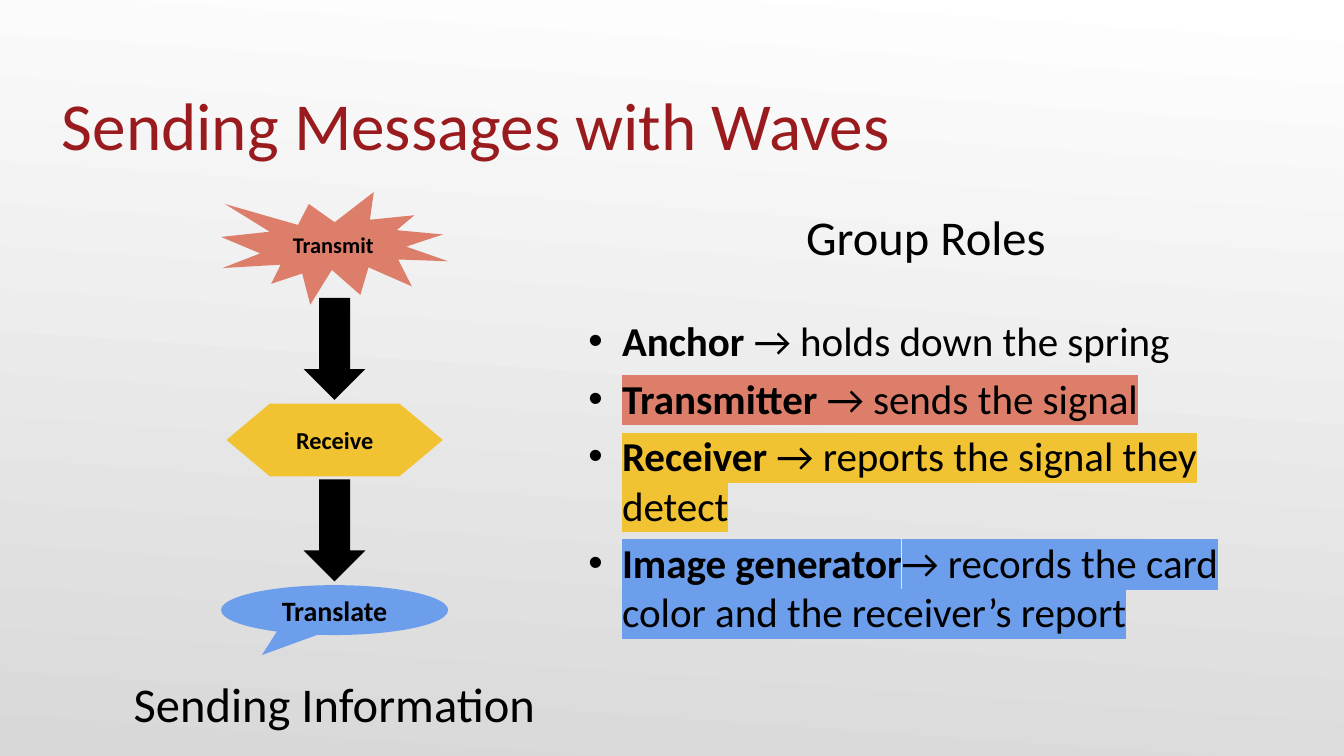
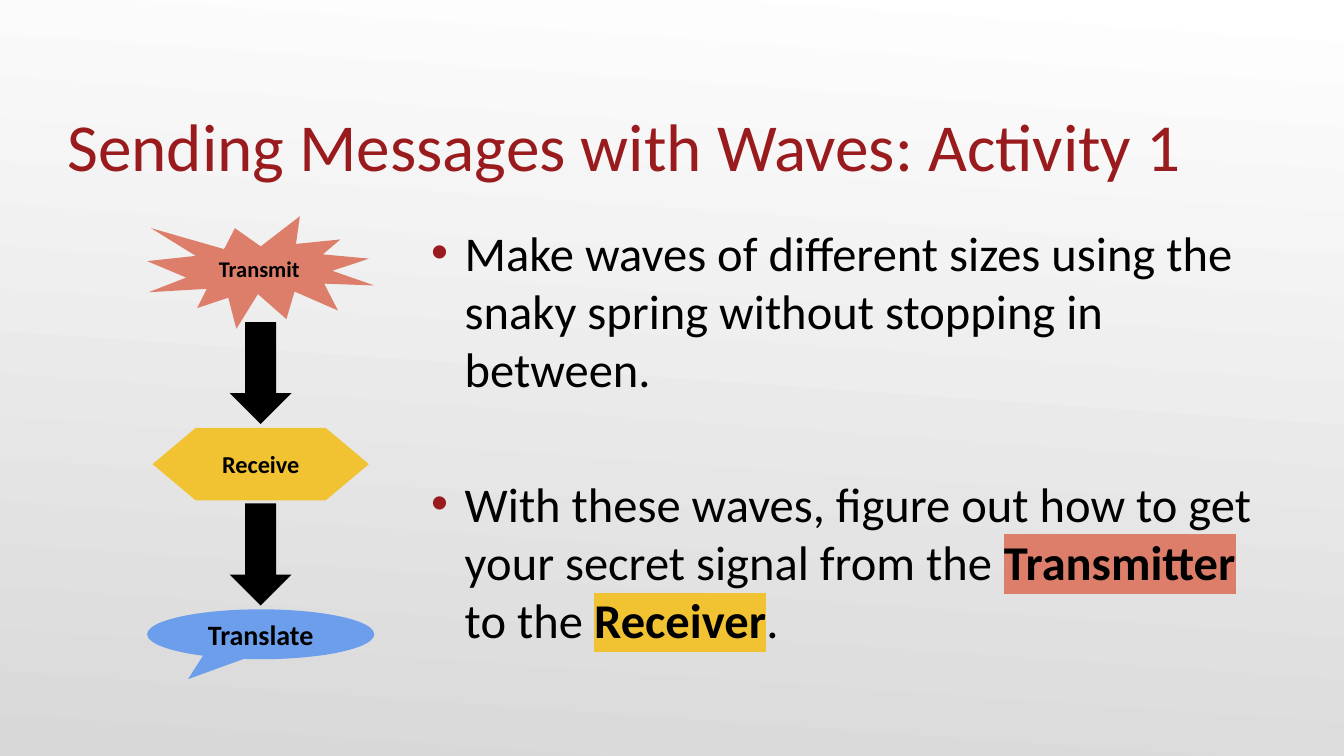
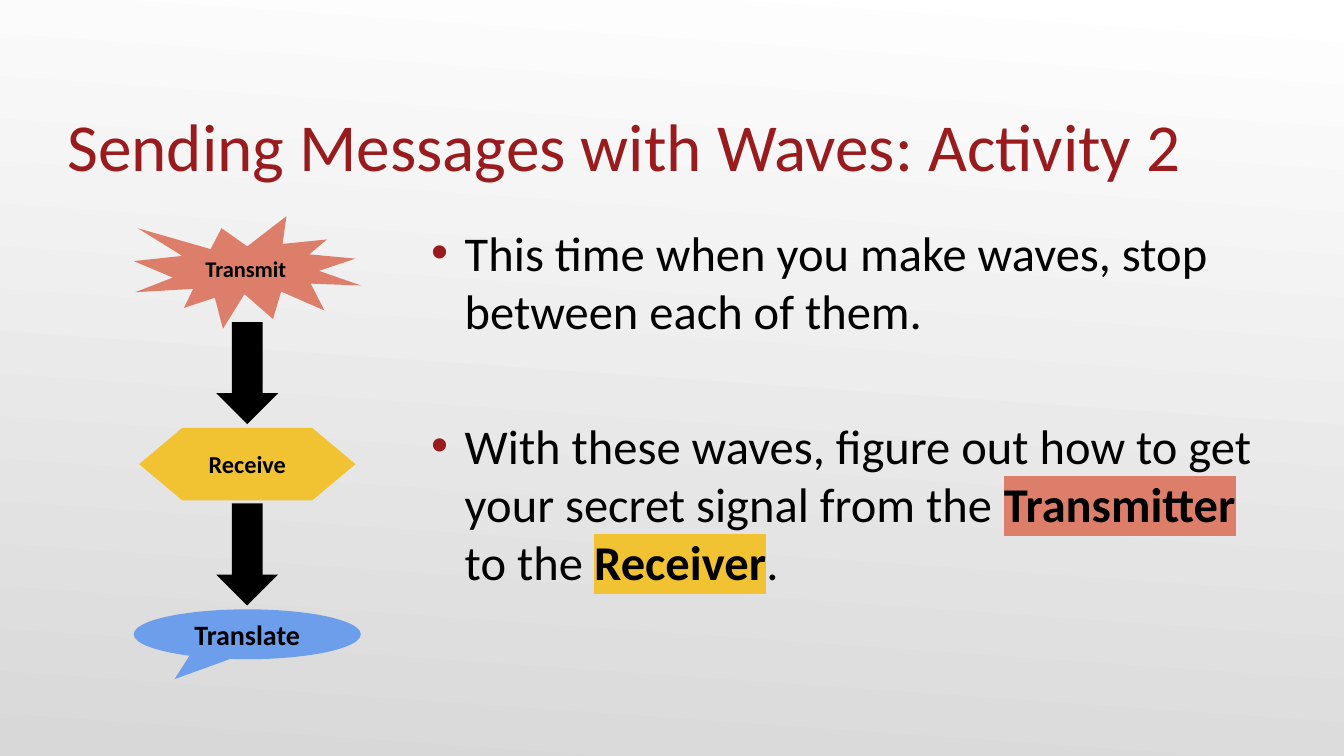
from lxml.etree import SubElement
from pptx import Presentation
from pptx.dml.color import RGBColor
from pptx.enum.shapes import MSO_SHAPE as SHAPE
from pptx.enum.text import MSO_ANCHOR as ANCHOR, PP_ALIGN as ALIGN
from pptx.oxml import parse_xml
from pptx.oxml.ns import nsdecls, qn
from pptx.util import Inches, Pt

FONT = "Calibri"
BLACK, RED = "000000", "991B1E"
CORAL, YELLOW, BLUE = "DD7E6B", "F1C232", "6D9EEB"
color = RGBColor.from_string

presentation = Presentation()
presentation.slide_width, presentation.slide_height = Inches(10), Inches(5.625)
# Grid of 100 columns and 100 rows
COLUMN = presentation.slide_width / 100
ROW = presentation.slide_height / 100

background = presentation.slide_master.background.fill
background.gradient()
background.gradient_angle = 360 - 94
for stop, shade in zip(background.gradient_stops, ("FFFFFF", "D8D8D8")):
    stop.color.rgb = color(shade)


def add_text_frame(slide, box, margins, anchor):
    """Add a text box at (left, top, width, height) in grid units."""
    left, top, width, height = box
    shape = slide.shapes.add_textbox(
        int(left * COLUMN), int(top * ROW), int(width * COLUMN), int(height * ROW))
    frame = shape.text_frame
    frame.word_wrap = True
    frame.vertical_anchor = anchor
    (frame.margin_left, frame.margin_top,
     frame.margin_right, frame.margin_bottom) = map(Inches, margins)
    return frame


def write(paragraph, runs, size, ink=BLACK):
    """Fill a paragraph with (text, bold, highlight) runs."""
    for text, bold, highlight in runs:
        run = paragraph.add_run()
        run.text = text
        run.font.size = Pt(size)
        run.font.bold = bold
        run.font.color.rgb = color(ink)
        run.font.name = FONT
        if highlight:
            run._r.rPr.find(qn("a:solidFill")).addnext(parse_xml(
                f'<a:highlight {nsdecls("a")}><a:srgbClr val="{highlight}"/></a:highlight>'))


# Shape, label, text size, fill, top in rows, width in columns, height in rows
FLOW = [
    (SHAPE.DOWN_ARROW, "", 0, BLACK, 14, 4.6, 13.5),
    (SHAPE.OVAL_CALLOUT, "Translate", 15, BLUE, 52, 16.9, 6.6),
    (SHAPE.EXPLOSION1, "Transmit", 12, CORAL, 0, 16.9, 14.9),
    (SHAPE.FLOWCHART_PREPARATION, "Receive", 13, YELLOW, 28, 16.1, 9.6),
    (SHAPE.DOWN_ARROW, "", 0, BLACK, 38, 4.6, 13.5),
]

ROLES = [
    [("Anchor ", True, None), ("→ holds down the spring", False, None)],
    [("Transmitter ", True, CORAL), ("→ sends the signal", False, CORAL)],
    [("Receiver", True, YELLOW),
     (" → reports the signal they detect", False, YELLOW)],
    [("Image generator", True, BLUE),
     ("→ records the card color and the receiver’s report", False, BLUE)],
]
SECRET_SIGNAL = [
    ("With these waves, figure out how to get your secret signal from the ", False, None),
    ("Transmitter", True, CORAL),
    (" to the ", False, None),
    ("Receiver", True, YELLOW),
    (".", False, None),
]
ACTIVITIES = [
    "Make waves of different sizes using the snaky spring without stopping in between.",
    "This time when you make waves, stop between each of them.",
]

# Title, title left and top, flow centre and top
SLIDES = [
    ("Sending Messages with Waves", 4.6, 7.6, 24.9, 25.4),
    ("Sending Messages with Waves: Activity 1", 5, 10.3, 19.4, 28.6),
    ("Sending Messages with Waves: Activity 2", 5, 10.3, 18.4, 28.6),
]

for index, (title, title_left, title_top, flow_center, flow_top) in enumerate(SLIDES):
    slide = presentation.slides.add_slide(presentation.slide_layouts[6])

    frame = add_text_frame(slide, (title_left, title_top, 90.8, 16.7),
                           (0, 0.05, 0, 0), ANCHOR.MIDDLE)
    write(frame.paragraphs[0], [(title, False, None)], 36, RED)

    if index == 0:
        frame = add_text_frame(slide, (8.4, 88.2, 33, 9.6),
                               (0.05, 0, 0.05, 0), ANCHOR.MIDDLE)
        caption = frame.paragraphs[0]
        caption.alignment = ALIGN.CENTER
        write(caption, [("Sending Information", False, None)], 26)

        frame = add_text_frame(slide, (42.8, 30.6, 52.2, 51.2),
                               (0.1, 0, 0.1, 0.05), ANCHOR.MIDDLE)
        heading = frame.paragraphs[0]
        heading.alignment = ALIGN.CENTER
        heading.space_after = Pt(27)
        write(heading, [("Group Roles", False, None)], 26)
        bullets, size, dot_color, gap = ROLES, 22, BLACK, 4.4
    else:
        frame = add_text_frame(slide, (31.1, 28.6, 64, 48.7),
                               (0.1, 0.05, 0.1, 0.05), ANCHOR.TOP)
        bullets = [[(ACTIVITIES[index - 1], False, None)], SECRET_SIGNAL]
        size, dot_color, gap = 26, RED, 41

    for number, runs in enumerate(bullets):
        first_in_box = number == 0 and index > 0
        paragraph = frame.paragraphs[0] if first_in_box else frame.add_paragraph()
        properties = paragraph._p.get_or_add_pPr()
        properties.set("marL", str(Inches(0.25)))
        properties.set("indent", str(-Inches(0.25)))
        dot = SubElement(properties, qn("a:buClr"))
        SubElement(dot, qn("a:srgbClr"), val=dot_color)
        SubElement(properties, qn("a:buFont"), typeface="Arial")
        SubElement(properties, qn("a:buChar"), char="•")
        if number:
            paragraph.space_before = Pt(gap)
        write(paragraph, runs, size)

    flow = slide.shapes.add_group_shape()
    for kind, label, label_size, fill, top, width, height in FLOW:
        shape = flow.shapes.add_shape(
            kind, int((flow_center - width / 2) * COLUMN), int((flow_top + top) * ROW),
            int(width * COLUMN), int(height * ROW))
        shape.shadow.inherit = False
        shape.fill.solid()
        shape.fill.fore_color.rgb = color(fill)
        shape.line.fill.background()
        if kind == SHAPE.OVAL_CALLOUT:
            shape.adjustments[0], shape.adjustments[1] = -0.32, 0.9
        if label:
            frame = shape.text_frame
            frame.vertical_anchor = ANCHOR.MIDDLE
            frame.margin_left = frame.margin_right = Inches(0.1)
            frame.margin_top = frame.margin_bottom = Inches(0.1)
            frame.paragraphs[0].alignment = ALIGN.CENTER
            write(frame.paragraphs[0], [(label, True, None)], label_size)

presentation.save("out.pptx")
